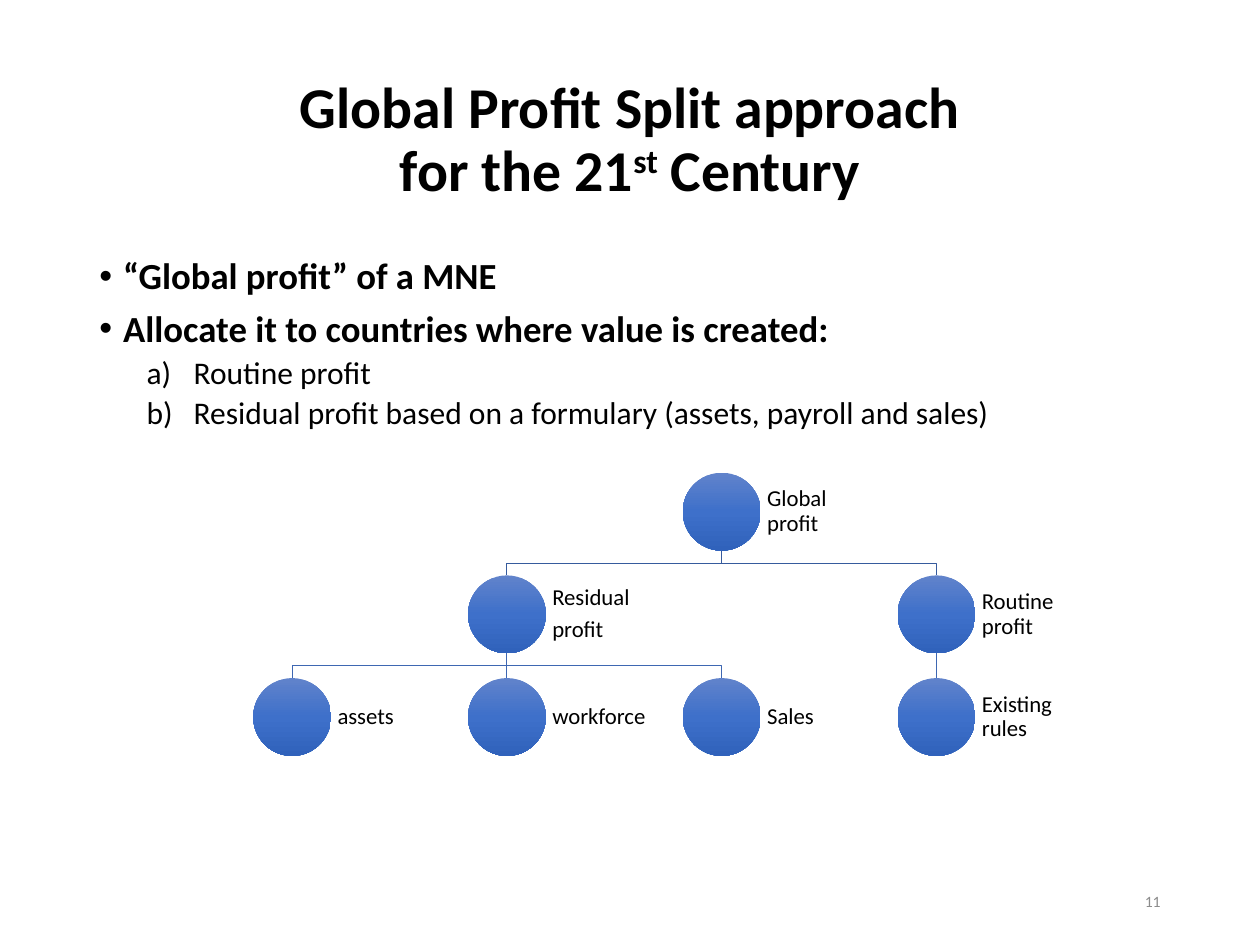
from lxml.etree import SubElement
from pptx import Presentation
from pptx.dml.color import RGBColor
from pptx.enum.shapes import MSO_CONNECTOR, MSO_SHAPE
from pptx.enum.text import MSO_ANCHOR, MSO_AUTO_SIZE, PP_ALIGN
from pptx.oxml.ns import qn
from pptx.util import Cm, Pt

HUES = {
    "text": "000000", "page": "8C8C8C",
    "top": "6183CB", "mid": "3E70CA", "low": "3062BB",
    "line1": "365B9D", "line2": "3E67B2",
}


def write(par, text, size, hue="text", bold=False, align=PP_ALIGN.LEFT,
          lines=0.9, before=0, after=0, base=0):
    par.alignment = align
    par.line_spacing = lines
    par.space_before, par.space_after = Pt(before), Pt(after)
    run = par.add_run()
    run.text = text
    font = run.font
    font.name, font.size, font.bold = "Calibri", Pt(size), bold
    font.color.rgb = RGBColor.from_string(HUES[hue])
    if base:
        run._r.get_or_add_rPr().set("baseline", str(base * 1000))


def place(box, left, top, width, height, anchor, inset=None):
    """Set the box's position and its text frame, and return the frame."""
    box.left, box.top, box.width, box.height = map(Cm, (left, top, width, height))
    frame = box.text_frame
    frame.word_wrap = True
    frame.auto_size = MSO_AUTO_SIZE.NONE
    frame.vertical_anchor = anchor
    if inset is not None:
        frame.margin_left = frame.margin_right = Cm(inset)
        frame.margin_top = frame.margin_bottom = Cm(inset)
    return frame


deck = Presentation()
deck.slide_width, deck.slide_height = Cm(25.4), Cm(19.05)
slide = deck.slides.add_slide(deck.slide_layouts[1])
shapes = slide.shapes

# Title
frame = place(shapes.title, 1.75, 1.01, 21.9, 3.68, MSO_ANCHOR.MIDDLE)
par = frame.paragraphs[0]
head = {"size": 33, "bold": True, "align": PP_ALIGN.CENTER}
write(par, "Global Profit Split approach", **head)
par.add_line_break()
write(par, "for the 21", **head)
write(par, "st", base=30, **head)
write(par, " Century", **head)

# List
frame = place(slide.placeholders[1], 1.75, 5.07, 21.9, 12.09, MSO_ANCHOR.TOP)
items = [
    (0, "“Global profit” of a MNE"),
    (0, "Allocate it to countries where value is created:"),
    (1, "Routine profit"),
    (1, "Residual profit based on a formulary (assets, payroll and sales)"),
]
for i, (level, text) in enumerate(items):
    par = frame.add_paragraph() if i else frame.paragraphs[0]
    par.level = level
    props = par._p.get_or_add_pPr()
    left, hang = ((0.48, 0.48), (1.9, 0.95))[level]
    props.set("marL", str(Cm(left)))
    props.set("indent", str(-Cm(hang)))
    if level:
        SubElement(props, qn("a:buAutoNum"), type="alphaLcParenR")
    else:
        SubElement(props, qn("a:buFont"), typeface="Arial")
        SubElement(props, qn("a:buChar"), char="•")
    write(par, text, (21, 18)[level], bold=not level,
          before=(7.5, 3.8)[level] if i else 0)

# Tree: columns and rows of equal pitch
SIZE = 1.57
mids = [5.89 + 4.33 * i for i in range(4)]
tops = [9.53 + 2.07 * i for i in range(3)]

links = [(0, 2, 1), (0, 2, 3), (1, 1, 0), (1, 1, 1), (1, 1, 2), (1, 3, 3)]
for row, start, end in links:
    x1, x2 = Cm(mids[start]), Cm(mids[end])
    y1, y2 = Cm(tops[row] + SIZE), Cm(tops[row + 1])
    if start == end:
        link = shapes.add_connector(MSO_CONNECTOR.STRAIGHT, x1, y1, x2, y2)
        SubElement(link._element.spPr, qn("a:effectLst"))
    else:
        half = (y1 + y2) // 2
        path = shapes.build_freeform(x1, y1)
        path.add_line_segments([(x1, half), (x2, half), (x2, y2)], close=False)
        link = path.convert_to_shape()
        link.fill.background()
        link.shadow.inherit = False
    link.line.width = Pt(0.5)
    link.line.color.rgb = RGBColor.from_string(HUES[("line1", "line2")[row]])

nodes = [
    (0, 2, ["Global profit"]), (1, 1, ["Residual", "profit"]),
    (2, 0, ["assets"]), (2, 1, ["workforce"]), (2, 2, ["Sales"]),
    (1, 3, ["Routine profit"]), (2, 3, ["Existing rules"]),
]
for row, col, words in nodes:
    left, top = mids[col] - SIZE / 2, tops[row]
    ball = shapes.add_shape(MSO_SHAPE.OVAL, Cm(left), Cm(top), Cm(SIZE), Cm(SIZE))
    ball.shadow.inherit = False
    ball.line.fill.background()
    ball.fill.gradient()
    ball.fill.gradient_angle = 270
    stops = ball.fill._fill._gradFill.find(qn("a:gsLst"))
    for stop in list(stops):
        stops.remove(stop)
    for spot, hue in ((0, "top"), (50, "mid"), (100, "low")):
        stop = SubElement(stops, qn("a:gs"), pos=str(spot * 1000))
        SubElement(stop, qn("a:srgbClr"), val=HUES[hue])

    label = shapes.add_textbox(0, 0, 0, 0)
    frame = place(label, left + SIZE, top, 2.36, SIZE, MSO_ANCHOR.MIDDLE, 0.13)
    for i, word in enumerate(words):
        par = frame.add_paragraph() if i else frame.paragraphs[0]
        write(par, word, 13, after=4.5)

# Page number
page = shapes.add_textbox(0, 0, 0, 0)
frame = place(page, 17.94, 17.66, 5.71, 1.01, MSO_ANCHOR.MIDDLE)
write(frame.paragraphs[0], "11", 9, "page", align=PP_ALIGN.RIGHT, lines=1.0)

deck.save("out.pptx")
